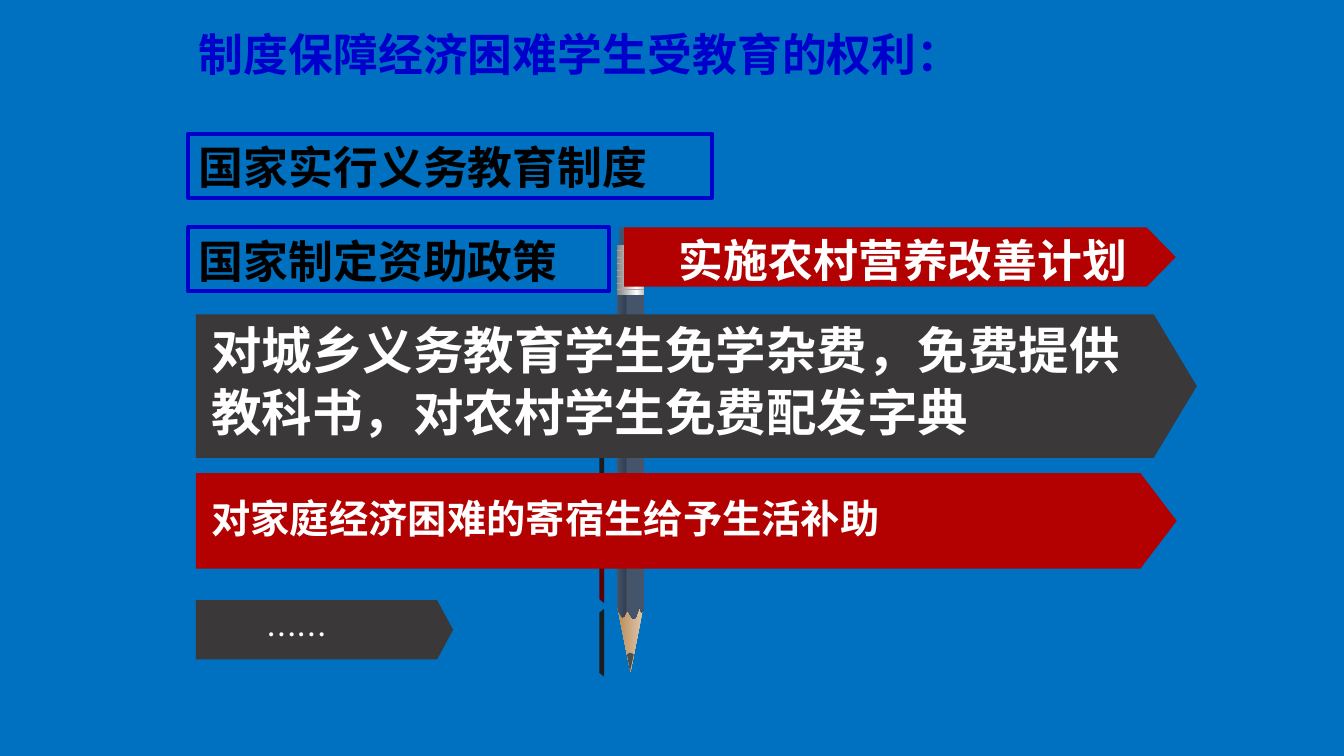
from pptx import Presentation
from pptx.util import Inches, Pt
from pptx.dml.color import RGBColor
from pptx.enum.shapes import MSO_SHAPE as Shape, MSO_CONNECTOR as Link
from pptx.enum.text import MSO_ANCHOR as Anchor, PP_ALIGN as Align
from pptx.oxml.ns import qn
from lxml.etree import SubElement

FACE = "Noto Sans CJK SC"
SKY = RGBColor(0x00, 0x70, 0xC0)
BLUE = RGBColor(0x00, 0x00, 0xCC)
BLACK = RGBColor(0x00, 0x00, 0x00)
WHITE = RGBColor(0xFF, 0xFF, 0xFF)
RED = RGBColor(0xB3, 0x00, 0x00)
GRAY = RGBColor(0x3A, 0x38, 0x38)
MAROON = RGBColor(0x5A, 0x00, 0x00)
COAL = RGBColor(0x1D, 0x1C, 0x1C)
SLATE = RGBColor(0x44, 0x54, 0x6A)
NAVY = RGBColor(0x33, 0x3F, 0x50)
SAND = RGBColor(0xE1, 0xC9, 0xAF)
WOOD = RGBColor(0xB8, 0x89, 0x54)
SILVER = RGBColor(0xBF, 0xBF, 0xBF)
STEEL = RGBColor(0x7F, 0x7F, 0x7F)
RING = RGBColor(0xA6, 0xA6, 0xA6)
LEAD = RGBColor(0x4C, 0x50, 0x4C)


def write(shape, text, size, color, bold=True, align=Align.LEFT, pad=0.08):
    frame = shape.text_frame
    frame.text = text
    frame.word_wrap = True
    frame.vertical_anchor = Anchor.MIDDLE
    frame.margin_left = frame.margin_right = Inches(pad)
    frame.margin_top = frame.margin_bottom = Inches(pad / 2)
    para = frame.paragraphs[0]
    para.alignment = align
    para.line_spacing = Pt(round(size * 1.23, 1))
    font = para.font
    font.size, font.bold, font.name = Pt(size), bold, FACE
    font.color.rgb = color
    base = para._p.pPr.find(qn("a:defRPr"))
    SubElement(base, qn("a:ea")).set("typeface", FACE)


def paint(shape, stops, angle=0):
    shape.shadow.inherit = False
    shape.line.fill.background()
    if len(stops) == 1:
        shape.fill.solid()
        shape.fill.fore_color.rgb = stops[0][1]
        return
    shape.fill.gradient()
    shape.fill.gradient_angle = angle
    row = shape._element.spPr.find(qn("a:gradFill")).find(qn("a:gsLst"))
    for old in list(row):
        row.remove(old)
    for spot, color in stops:
        stop = SubElement(row, qn("a:gs"))
        stop.set("pos", str(spot * 1000))
        SubElement(stop, qn("a:srgbClr")).set("val", str(color))


deck = Presentation()
deck.slide_width, deck.slide_height = Inches(14.06), Inches(7.91)
slide = deck.slides.add_slide(deck.slide_layouts[5])
slide.background.fill.solid()
slide.background.fill.fore_color.rgb = SKY
shapes = slide.shapes

title = shapes.title
title.left, title.top = Inches(1.97), Inches(0.22)
title.width, title.height = Inches(10.13), Inches(0.67)
write(title, "制度保障经济困难学生受教育的权利：", 33.8, BLUE, pad=0.11)

for top, width, text in [
    (1.4, 5.48, "国家实行义务教育制度"),
    (2.38, 4.4, "国家制定资助政策"),
]:
    box = shapes.add_shape(Shape.RECTANGLE, Inches(1.97), Inches(top), Inches(width), Inches(0.67))
    box.shadow.inherit = False
    box.fill.background()
    box.line.color.rgb = BLUE
    box.line.width = Pt(3)
    write(box, text, 33.8, BLACK, pad=0.11)

tip = shapes.add_shape(Shape.PENTAGON, Inches(6.23), Inches(6.52), Inches(0.73), Inches(0.29))
tip.adjustments[0] = 2.82
tip.rotation = 90
paint(tip, [(0, SAND), (100, WOOD)], 270)

cap = shapes.add_shape(Shape.RECTANGLE, Inches(6.45), Inches(2.56), Inches(0.29), Inches(0.53))
paint(cap, [(0, SILVER), (27, WHITE), (100, STEEL)], 180)

rubber = shapes.add_shape(Shape.RECTANGLE, Inches(6.48), Inches(2.38), Inches(0.23), Inches(0.18))
paint(rubber, [(0, SLATE)])

body = [(6.45, 3.09), (6.74, 3.09), (6.74, 6.31), (6.73, 6.38), (6.71, 6.41), (6.69, 6.35),
        (6.65, 6.46), (6.63, 6.48), (6.61, 6.46), (6.56, 6.38), (6.53, 6.45), (6.51, 6.46),
        (6.47, 6.4), (6.45, 6.33)]
point = [(6.59, 6.83), (6.62, 6.84), (6.63, 6.85), (6.59, 7.03), (6.56, 6.85), (6.57, 6.84)]
parts = [
    (body, [(0, SLATE), (34, NAVY), (38, SLATE), (100, SLATE)]),
    (point, [(0, LEAD)]),
]
for top, color in [(6.37, COAL), (5.6, MAROON), (4.74, COAL), (3.99, MAROON)]:
    fold = [(6.32, top), (6.32, top + 0.71), (6.27, top + 0.67), (6.27, top + 0.04)]
    parts.append((fold, [(0, color)]))
for spots, stops in parts:
    spots = [(Inches(x), Inches(y)) for x, y in spots]
    pen = shapes.build_freeform(*spots[0])
    pen.add_line_segments(spots[1:], close=True)
    paint(pen.convert_to_shape(), stops)

for step in range(7):
    y = Inches(2.62 + step * 0.068)
    ring = shapes.add_connector(Link.STRAIGHT, Inches(6.45), y, Inches(6.74), y)
    ring.line.color.rgb = RING
    ring.line.width = Pt(0.5)
    SubElement(ring._element.spPr, qn("a:effectLst"))

for left, top, width, height, slant, color in [
    (6.53, 2.38, 5.77, 0.62, 0.49, RED),
    (2.05, 3.29, 10.47, 1.5, 0.3, GRAY),
    (2.05, 4.95, 10.26, 1, 0.38, RED),
    (2.05, 6.28, 2.69, 0.62, 0.27, GRAY),
]:
    bar = shapes.add_shape(Shape.PENTAGON, Inches(left), Inches(top), Inches(width), Inches(height))
    bar.adjustments[0] = slant
    paint(bar, [(0, color)])

for left, top, width, height, text, size, bold, align in [
    (7.02, 2.38, 5.28, 0.65, "实施农村营养改善计划", 33.8, True, Align.LEFT),
    (2.13, 3.29, 9.88, 1.36, "对城乡义务教育学生免学杂费，免费提供教科书，对农村学生免费配发字典", 38, True, Align.LEFT),
    (2.13, 5.12, 8.72, 0.58, "对家庭经济困难的寄宿生给予生活补助", 29.6, True, Align.LEFT),
    (2.21, 6.36, 1.79, 0.55, "……", 23.2, False, Align.CENTER),
]:
    label = shapes.add_textbox(Inches(left), Inches(top), Inches(width), Inches(height))
    write(label, text, size, WHITE, bold, align)

deck.save("out.pptx")
